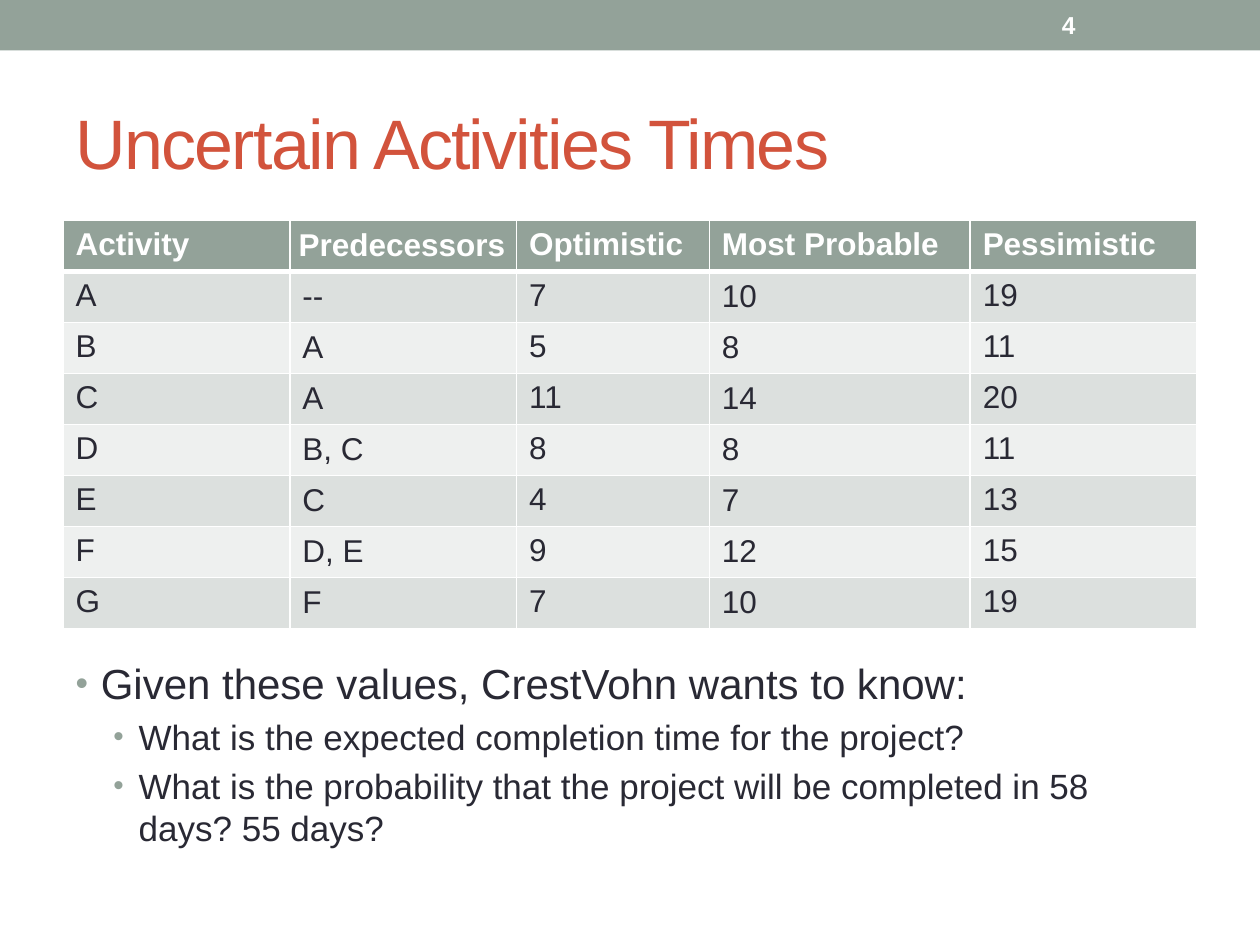
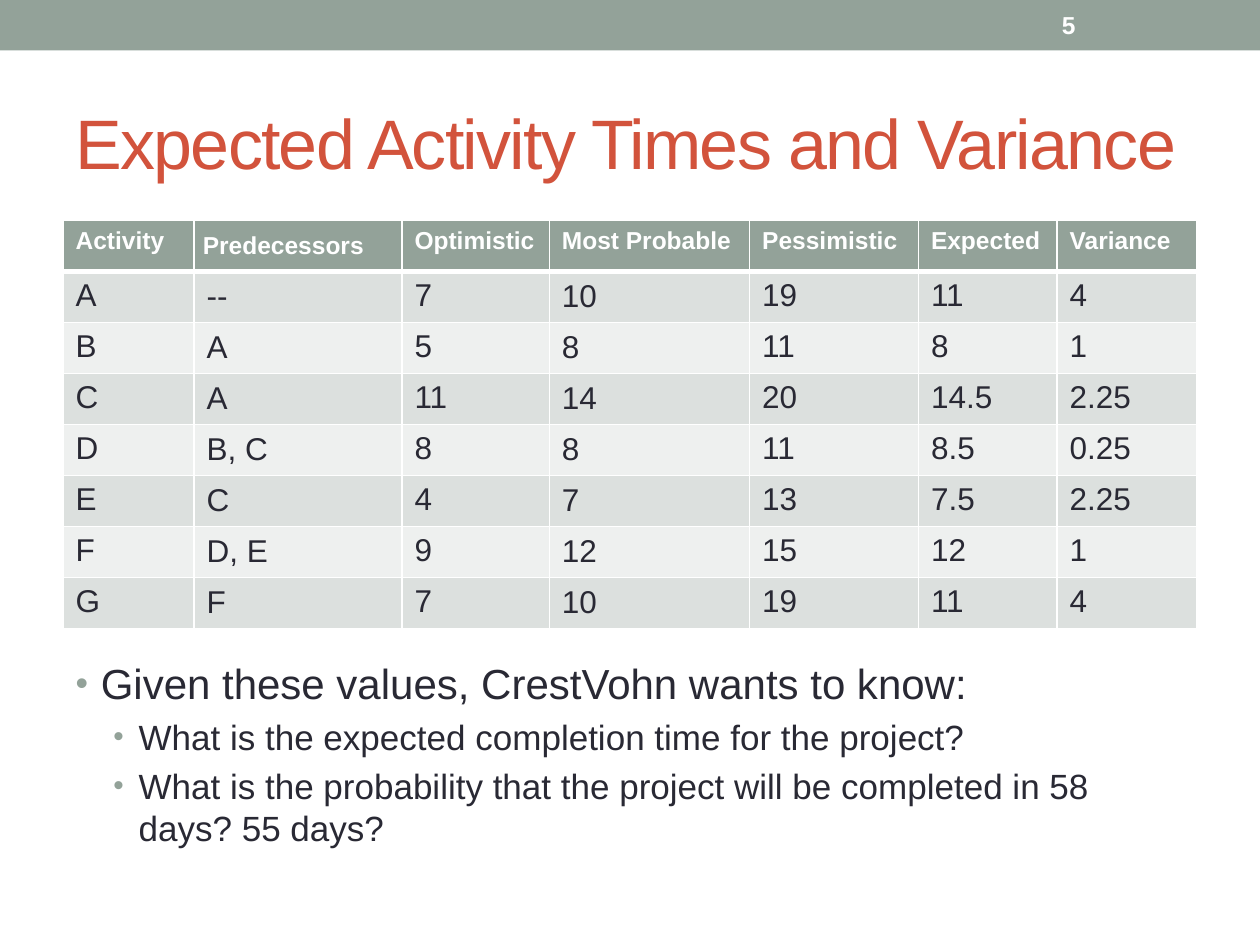
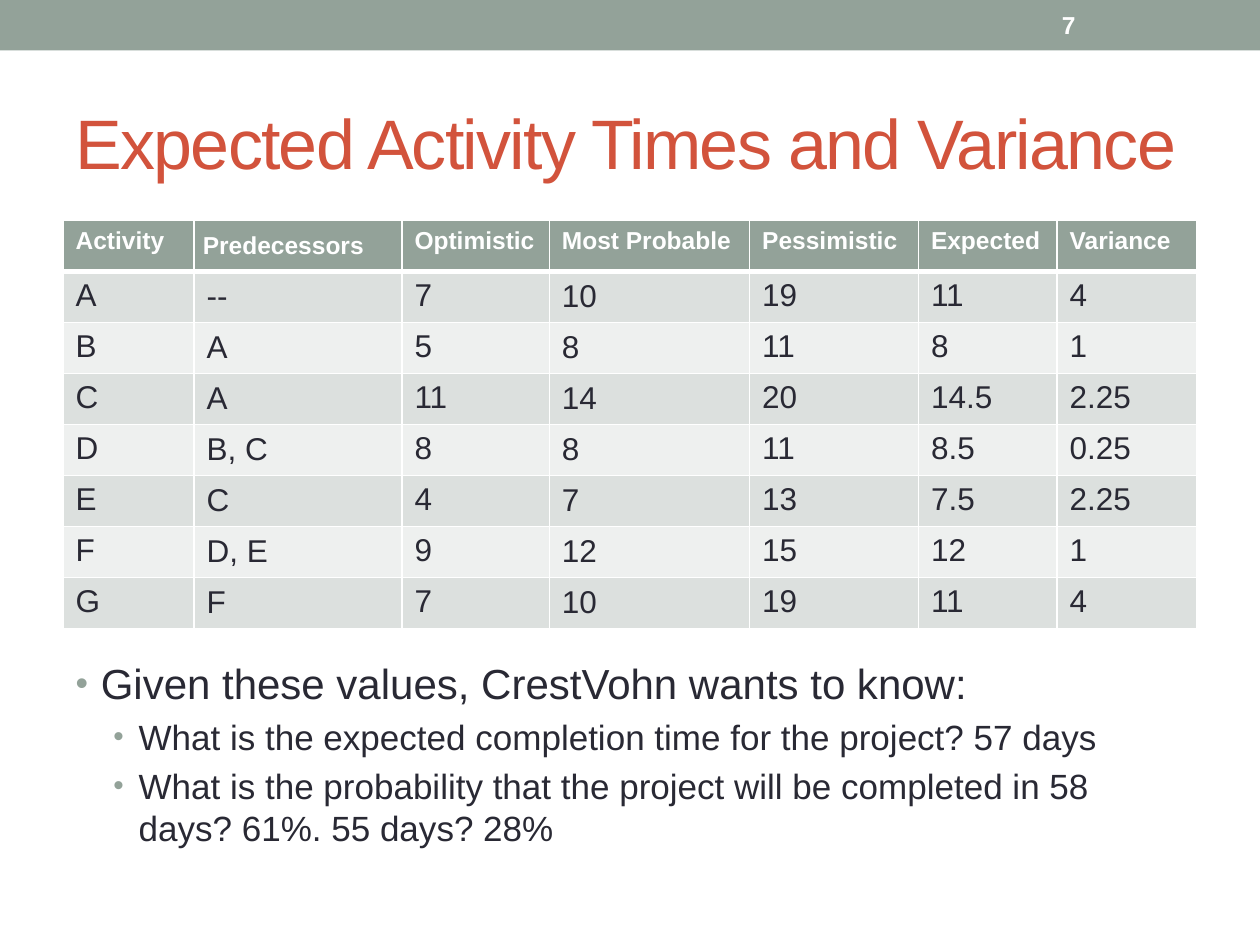
from dataclasses import dataclass

from lxml.etree import SubElement
from pptx import Presentation
from pptx.dml.color import RGBColor as RGB
from pptx.enum.shapes import MSO_SHAPE as SHAPE
from pptx.enum.text import MSO_ANCHOR as ANCHOR, MSO_AUTO_SIZE as AUTO, PP_ALIGN as ALIGN
from pptx.oxml.ns import qn
from pptx.util import Inches, Pt

COLUMNS, ROWS = 100, 75


@dataclass(frozen=True)
class Theme:
    font: str = "Arial"
    band: str = "93A299"
    title: str = "D2533C"
    text: str = "292934"
    white: str = "FFFFFF"
    stripes: tuple = ("DCE0DE", "EEF0EF")
    title_size: int = 40
    number_size: int = 14
    cell_size: int = 18
    list_sizes: tuple = (24, 20)
    list_indents: tuple = (0.2, 0.5)
    hanging: float = 0.2
    bullet_percent: int = 85
    rule: int = 1
    header_rule: int = 3


class Deck:
    def __init__(self, theme):
        self.theme = theme
        self.prs = Presentation()
        self.prs.slide_width, self.prs.slide_height = Inches(10), Inches(7.5)
        self.slide = None

    def grid(self, col, row, cols, rows):
        dx, dy = self.prs.slide_width / COLUMNS, self.prs.slide_height / ROWS
        return [round(v) for v in (col * dx, row * dy, cols * dx, rows * dy)]

    def place(self, sp, *cells):
        sp.left, sp.top, sp.width, sp.height = self.grid(*cells)

    def run(self, p, text, size, color, bold=False):
        r = p.add_run()
        r.text = text
        r.font.name, r.font.size, r.font.bold = self.theme.font, Pt(size), bold
        r.font.color.rgb = RGB.from_string(color)
        return r

    def new_slide(self):
        first = self.slide is None
        self.slide = self.prs.slides.add_slide(self.prs.slide_layouts[1])
        if first:
            self.master_band()

    def master_band(self):
        sp = self.slide.shapes.add_shape(SHAPE.RECTANGLE, *self.grid(0, 0, COLUMNS, 4))
        sp.shadow.inherit = False
        sp.fill.solid()
        sp.fill.fore_color.rgb = RGB.from_string(self.theme.band)
        sp.line.fill.background()
        self.prs.slide_master.shapes.element.insert(2, sp.element)

    def title(self, text):
        sp = self.slide.shapes.title
        self.place(sp, 5, 5.8, 90, 10.8)
        tf = sp.text_frame
        tf.auto_size, tf.vertical_anchor = AUTO.NONE, ANCHOR.MIDDLE
        p = tf.paragraphs[0]
        p.alignment = ALIGN.LEFT
        r = self.run(p, text, self.theme.title_size, self.theme.title)
        r.font._element.set("spc", "-100")

    def number(self, value):
        sp = self.slide.shapes.add_textbox(*self.grid(83.3, 0.2, 11.7, 3.6))
        tf = sp.text_frame
        tf.word_wrap, tf.vertical_anchor = True, ANCHOR.MIDDLE
        self.run(tf.paragraphs[0], str(value), self.theme.number_size, self.theme.white, True)

    def bullets(self, items):
        th = self.theme
        sp = self.slide.placeholders[1]
        self.place(sp, 5, 51.7, 90, 17.6)
        self.slide.shapes.element.append(sp.element)
        tf = sp.text_frame
        tf.auto_size, tf.vertical_anchor = AUTO.NONE, ANCHOR.TOP
        for i, (level, text) in enumerate(items):
            p = tf.add_paragraph() if i else tf.paragraphs[0]
            p.level = level
            pPr = p._p.get_or_add_pPr()
            pPr.set("marL", str(Inches(th.list_indents[level])))
            pPr.set("indent", str(-Inches(th.hanging)))
            SubElement(SubElement(pPr, qn("a:buClr")), qn("a:srgbClr"), val=th.band)
            SubElement(pPr, qn("a:buSzPct"), val=str(th.bullet_percent * 1000))
            SubElement(pPr, qn("a:buChar"), char="•")
            self.run(p, text, th.list_sizes[level], th.text)

    def borders(self, cell, top, bottom):
        tcPr = cell._tc.get_or_add_tcPr()
        widths = {"L": self.theme.rule, "R": self.theme.rule, "T": top, "B": bottom}
        for side, width in widths.items():
            ln = SubElement(tcPr, qn(f"a:ln{side}"), w=str(Pt(width)))
            fill = SubElement(ln, qn("a:solidFill"))
            SubElement(fill, qn("a:srgbClr"), val=self.theme.white)

    def table(self, rows, widths, header_size):
        th = self.theme
        frame = self.slide.shapes.add_table(len(rows), len(widths), *self.grid(5, 17.5, 90, 32.4))
        tbl = frame.table
        for column, width in zip(tbl.columns, widths):
            column.width = self.grid(0, 0, width, 0)[2]
        for i, row in enumerate(rows):
            header = i == 0
            for j, text in enumerate(row):
                cell = tbl.cell(i, j)
                self.borders(cell, th.header_rule if i == 1 else th.rule,
                             th.header_rule if header else th.rule)
                cell.fill.solid()
                cell.fill.fore_color.rgb = RGB.from_string(
                    th.band if header else th.stripes[(i - 1) % 2])
                if j == 1 or (j == 3 and not header):
                    cell.vertical_anchor = ANCHOR.MIDDLE
                if header and j == 1:
                    cell.margin_left = cell.margin_right = Inches(0.07)
                    cell.margin_top = cell.margin_bottom = 0
                self.run(cell.text_frame.paragraphs[0], text,
                         header_size if header else th.cell_size,
                         th.white if header else th.text, header)


ACTIVITIES = [
    ("A", "--", 7, 10, 19),
    ("B", "A", 5, 8, 11),
    ("C", "A", 11, 14, 20),
    ("D", "B, C", 8, 8, 11),
    ("E", "C", 4, 7, 13),
    ("F", "D, E", 9, 12, 15),
    ("G", "F", 7, 10, 19),
]
HEADINGS = ("Activity", "Predecessors", "Optimistic", "Most Probable", "Pessimistic")
ESTIMATE_HEADINGS = ("Expected", "Variance")


def with_estimates(activity):
    low, likely, high = activity[2:]
    return activity + ((low + 4 * likely + high) / 6, ((high - low) / 6) ** 2)


def as_text(row):
    return [v if isinstance(v, str) else f"{v:g}" for v in row]


def questions(time="", first="", second=""):
    return [
        (0, "Given these values, CrestVohn wants to know:"),
        (1, f"What is the expected completion time for the project?{time}"),
        (1, "What is the probability that the project will be completed in "
            f"58 days?{first} 55 days?{second}"),
    ]


def main():
    times = [HEADINGS, *map(as_text, ACTIVITIES)]
    estimates = [HEADINGS + ESTIMATE_HEADINGS,
                 *(as_text(with_estimates(a)) for a in ACTIVITIES)]
    times_layout = (times, (18, 18, 15.3, 20.7, 18), 18)
    estimates_layout = (estimates, (10.4, 16.5, 11.7, 15.9, 13.4, 11, 11.1), 14)
    estimates_title = "Expected Activity Times and Variance"
    slides = [
        (4, "Uncertain Activities Times", times_layout, questions()),
        (5, estimates_title, estimates_layout, questions()),
        (7, estimates_title, estimates_layout, questions(" 57 days", " 61%.", " 28%")),
    ]
    deck = Deck(Theme())
    for number, title, table, items in slides:
        deck.new_slide()
        deck.title(title)
        deck.table(*table)
        deck.number(number)
        deck.bullets(items)
    deck.prs.save("out.pptx")


if __name__ == "__main__":
    main()
